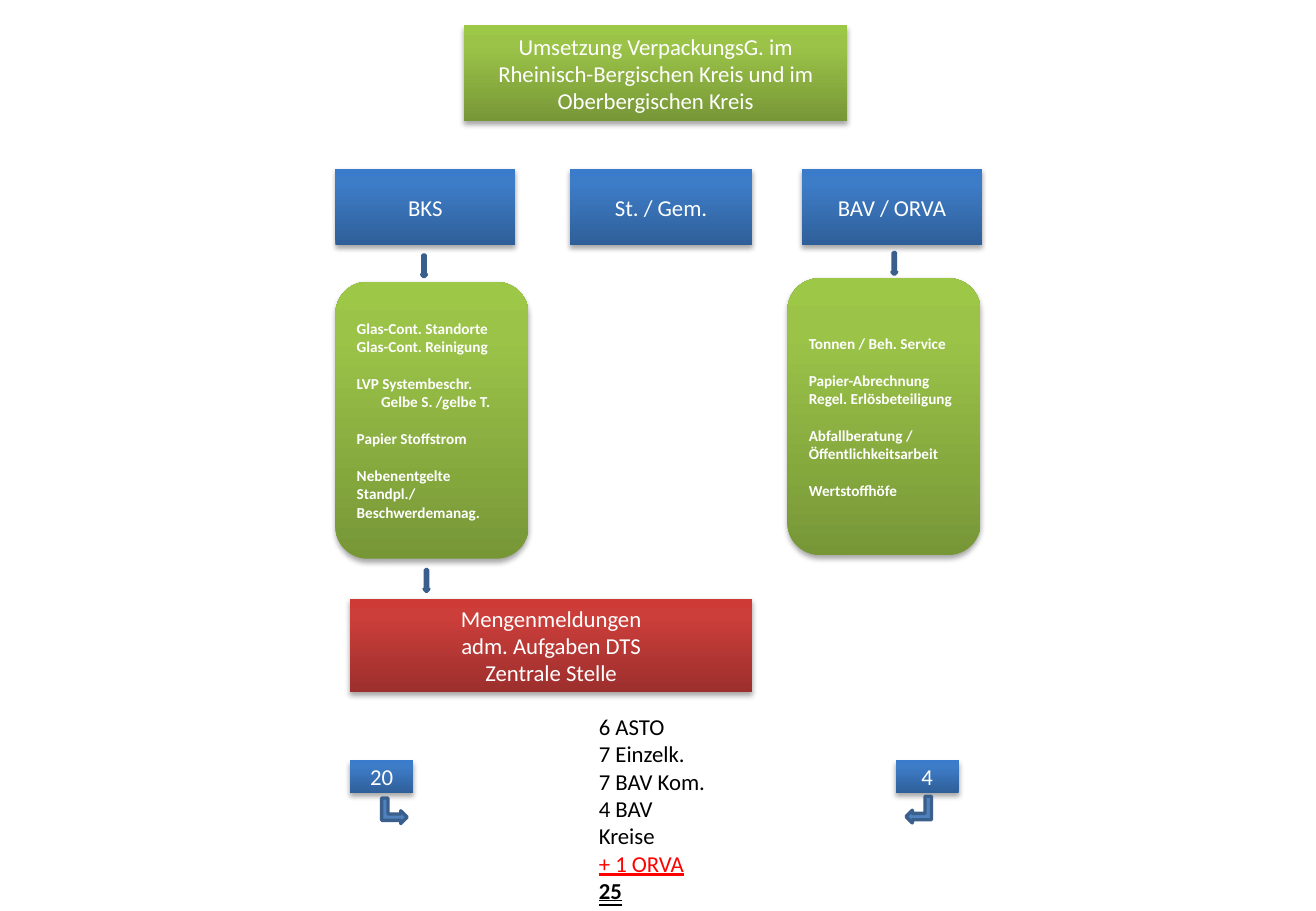
from copy import deepcopy

from lxml import etree
from pptx import Presentation
from pptx.dml.color import RGBColor
from pptx.enum.shapes import MSO_SHAPE
from pptx.enum.text import MSO_ANCHOR, MSO_AUTO_SIZE, MSO_UNDERLINE, PP_ALIGN
from pptx.oxml.ns import qn
from pptx.util import Emu, Pt

PX = 9144
FONT = "Calibri"
BODY_SIZE = 13.5
LIST_SIZE = 9
GROUP_GAP = 11
SUB_INDENT = 20

RECT = MSO_SHAPE.RECTANGLE
ROUNDED = MSO_SHAPE.ROUNDED_RECTANGLE
DOWN = MSO_SHAPE.DOWN_ARROW
BENT = MSO_SHAPE.BENT_UP_ARROW
LEFT = PP_ALIGN.LEFT
CENTER = PP_ALIGN.CENTER
MIDDLE = MSO_ANCHOR.MIDDLE
GROW = MSO_AUTO_SIZE.SHAPE_TO_FIT_TEXT
SINGLE = MSO_UNDERLINE.SINGLE_LINE
DOUBLE = MSO_UNDERLINE.DOUBLE_LINE

COLORS = {
    "white": "FFFFFF",
    "black": "000000",
    "alert": "FF0000",
    "arrow": "4F81BD",
    "arrow_edge": "3A5F8C",
}
GRADIENTS = {
    "green": ("779737", "9BC348", "9DC746"),
    "blue": ("2F5F99", "3D7CC7", "3A7CCB"),
    "red": ("9C2F2D", "CB3E3A", "CE3B37"),
}
GRADIENT_POSITIONS = (0, 0.8, 1)

TITLE = "Umsetzung VerpackungsG. im Rheinisch-Bergischen Kreis und im Oberbergischen Kreis"
PARTNERS = [
    ("BKS", 276, 148),
    ("St. / Gem.", 469, 150),
    ("BAV / ORVA", 660, 148),
]
TASK_LISTS = [
    (276, 232, [
        ["Glas-Cont. Standorte", "Glas-Cont. Reinigung"],
        ["LVP Systembeschr.", "> Gelbe S. /gelbe T."],
        ["Papier Stoffstrom"],
        ["Nebenentgelte Standpl./ Beschwerdemanag."],
    ]),
    (648, 229, [
        ["Tonnen / Beh. Service"],
        ["Papier-Abrechnung", "Regel. Erlösbeteiligung"],
        ["Abfallberatung /", "Öffentlichkeitsarbeit"],
        ["Wertstoffhöfe"],
    ]),
]
REPORTS = ["Mengenmeldungen", "adm. Aufgaben DTS", "Zentrale Stelle"]
DOWN_ARROWS = [(347, 210), (734, 208), (349, 469)]
COUNTS = [("20", 288), ("4", 737)]
MEMBERS = [
    ("6 ASTO", "black", False, None),
    ("7 Einzelk.", "black", False, None),
    ("7 BAV Kom.", "black", False, None),
    ("4 BAV Kreise", "black", False, None),
    ("+ 1 ORVA", "alert", False, SINGLE),
    ("25", "black", True, DOUBLE),
]


def px(*lengths):
    return [Emu(length * PX) for length in lengths]


def rgb(name):
    return RGBColor.from_string(COLORS[name])


def add_line(frame, index, text, size, color, align=LEFT, bold=False, underline=None):
    paragraph = frame.paragraphs[0] if index == 0 else frame.add_paragraph()
    paragraph.alignment = align
    run = paragraph.add_run()
    run.text = text
    run.font.name = FONT
    run.font.size = Pt(size)
    run.font.bold = bold
    run.font.underline = underline
    run.font.color.rgb = rgb(color)
    return paragraph


def fill_gradient(shape, name):
    shape.fill.gradient()
    shape.fill.gradient_angle = 90
    stops = shape._element.spPr.find(".//" + qn("a:gsLst"))
    stops.append(deepcopy(stops[-1]))
    for stop, position, color in zip(shape.fill.gradient_stops, GRADIENT_POSITIONS, GRADIENTS[name]):
        stop.position = position
        stop.color.rgb = RGBColor.from_string(color)


def add_soft_shadow(shape):
    shape.shadow.inherit = False
    effects = shape._element.spPr.find(qn("a:effectLst"))
    shadow = etree.SubElement(effects, qn("a:outerShdw"), blurRad="40000", dist="23000",
                              dir="5400000", rotWithShape="0")
    color = etree.SubElement(shadow, qn("a:srgbClr"), val=COLORS["black"])
    etree.SubElement(color, qn("a:alpha"), val="35000")


def add_panel(slide, kind, box, gradient):
    panel = slide.shapes.add_shape(kind, *px(*box))
    fill_gradient(panel, gradient)
    panel.line.fill.background()
    add_soft_shadow(panel)
    panel.text_frame.word_wrap = True
    panel.text_frame.vertical_anchor = MIDDLE
    return panel


def add_label_box(slide, box, gradient, lines):
    frame = add_panel(slide, RECT, box, gradient).text_frame
    for index, text in enumerate(lines):
        add_line(frame, index, text, BODY_SIZE, "white", CENTER)


def add_task_list(slide, left, top, groups):
    frame = add_panel(slide, ROUNDED, (left, top, 159, 228), "green").text_frame
    index = 0
    for group in groups:
        for position, task in enumerate(group):
            paragraph = add_line(frame, index, task.removeprefix("> "), LIST_SIZE, "white", bold=True)
            if task.startswith("> "):
                paragraph._p.get_or_add_pPr().set("marL", str(SUB_INDENT * PX))
            if index and position == 0:
                paragraph.space_before = Pt(GROUP_GAP)
            index += 1


def add_arrow(slide, kind, box, rotation=0, mirrored=False):
    arrow = slide.shapes.add_shape(kind, *px(*box))
    arrow.shadow.inherit = False
    arrow.fill.solid()
    arrow.fill.fore_color.rgb = rgb("arrow")
    arrow.line.color.rgb = rgb("arrow_edge")
    arrow.line.width = Pt(2)
    arrow.rotation = rotation
    if mirrored:
        arrow._element.spPr.find(qn("a:xfrm")).set("flipH", "1")


def add_member_list(slide, box):
    frame = slide.shapes.add_textbox(*px(*box)).text_frame
    frame.word_wrap = True
    frame.auto_size = GROW
    for index, (text, color, bold, underline) in enumerate(MEMBERS):
        add_line(frame, index, text, BODY_SIZE, color, bold=bold, underline=underline)


def main():
    prs = Presentation()
    prs.slide_width, prs.slide_height = px(1083, 750)
    slide = prs.slides.add_slide(prs.slide_layouts[6])

    add_label_box(slide, (382, 21, 315, 79), "green", [TITLE])
    for partner, left, width in PARTNERS:
        add_label_box(slide, (left, 139, width, 63), "blue", [partner])
    for left, top, groups in TASK_LISTS:
        add_task_list(slide, left, top, groups)
    for left, top in DOWN_ARROWS:
        add_arrow(slide, DOWN, (left, top, 4, 18))
    add_label_box(slide, (288, 493, 331, 77), "red", REPORTS)
    for count, left in COUNTS:
        add_label_box(slide, (left, 626, 52, 27), "blue", [count])
    add_arrow(slide, BENT, (314, 657, 21, 21), rotation=90)
    add_arrow(slide, BENT, (745, 656, 22, 21), rotation=270, mirrored=True)
    add_member_list(slide, (483, 582, 112, 192))

    prs.save("out.pptx")


if __name__ == "__main__":
    main()
